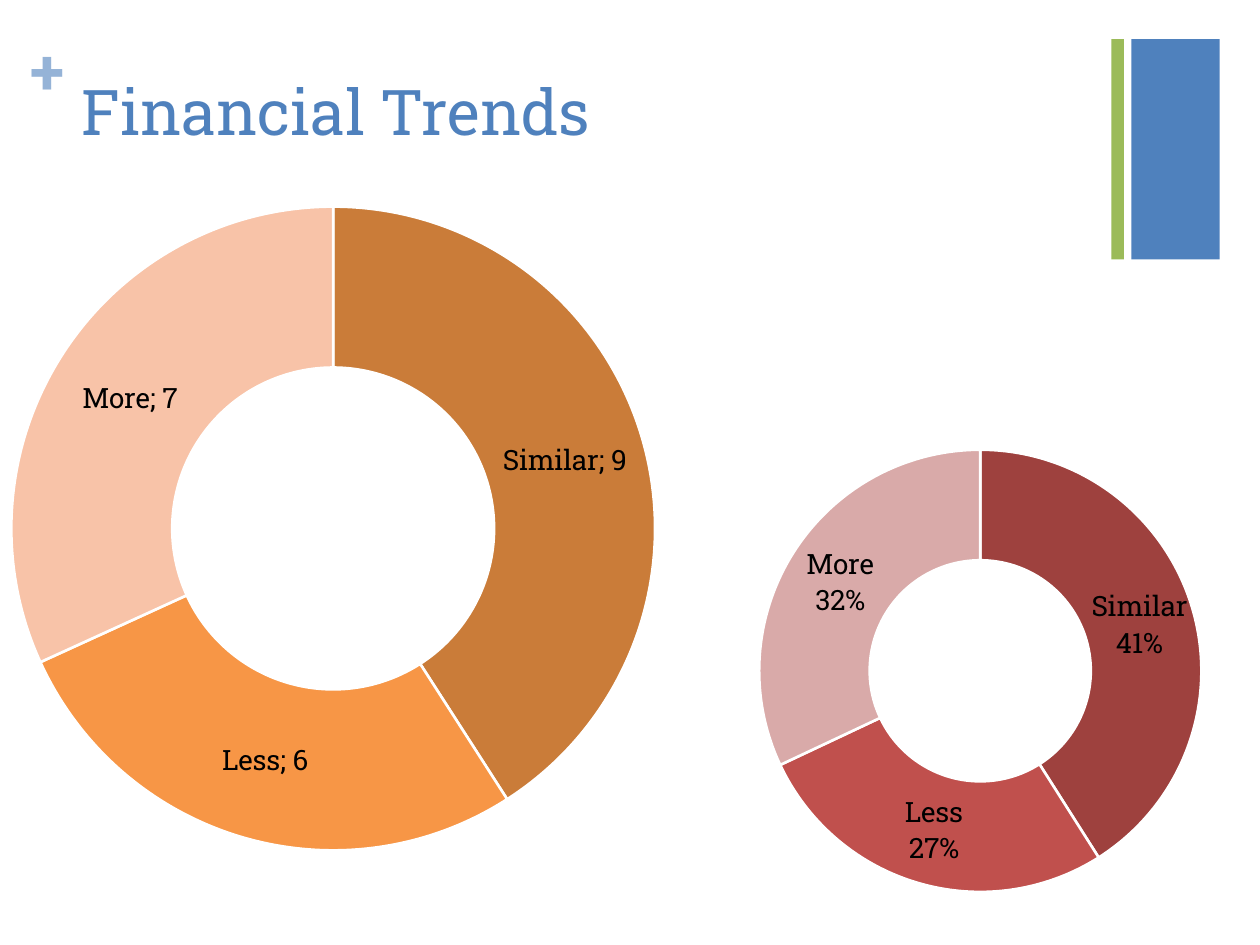
from lxml import etree
from pptx import Presentation
from pptx import util as u
from pptx.chart.data import CategoryChartData
from pptx.dml.color import RGBColor
from pptx.enum import chart as charts, shapes, text
from pptx.oxml.ns import qn

FONT = "Roboto Slab"
COLORS = {
    "blue": "4F81BD", "light_blue": "95B3D7", "green": "9BBB59",
    "dark_orange": "CA7C39", "orange": "F79646", "light_orange": "F8C3A8",
    "dark_red": "9E413E", "red": "C0504D", "light_red": "D9AAA9",
    "black": "000000", "white": "FFFFFF",
}
CATEGORIES = ["Similar", "Less", "More"]


def color(name):
    return RGBColor.from_string(COLORS[name])


def add_bar(slide, left, top, width, height, fill):
    bar = slide.shapes.add_shape(
        shapes.MSO_SHAPE.RECTANGLE,
        u.Inches(left), u.Inches(top), u.Inches(width), u.Inches(height))
    bar.shadow.inherit = False
    bar.fill.solid()
    bar.fill.fore_color.rgb = color(fill)
    bar.line.fill.background()


def add_label(slide, box, wording, fill, bold=False, inset=(0, 0)):
    label = slide.shapes.add_textbox(*[u.Inches(length) for length in box])
    frame = label.text_frame
    frame.word_wrap = True
    frame.vertical_anchor = text.MSO_ANCHOR.TOP
    frame.margin_left = frame.margin_right = u.Inches(inset[0])
    frame.margin_top = frame.margin_bottom = u.Inches(inset[1])
    frame.text = wording
    font = frame.paragraphs[0].runs[0].font
    font.name, font.size, font.bold = FONT, u.Pt(36), bold
    font.color.rgb = color(fill)


def add_decoration(slide, left, top):
    """Green and blue bars in the upper right corner."""
    add_bar(slide, left, top, 0.1, 1.75, "green")
    add_bar(slide, left + 0.16, top, 0.7, 1.75, "blue")


def add_heading(slide, left, top):
    """Plus sign and title."""
    add_label(slide, (left, top, 0.29, 0.61), "+", "light_blue", bold=True)
    add_label(slide, (left + 0.31, top + 0.28, 8.26, 1.22),
              "Financial Trends", "blue", inset=(0.1, 0.05))


def set_ring_layout(plot_area, width, height):
    """Fix the ring as a square, 0.14 in from top and bottom of the chart."""
    side = height - 0.28
    places = {"x": ((width - side) / 2 - 0.03) / width, "y": 0.14 / height,
              "w": side / width, "h": side / height}
    for old in plot_area.findall(qn("c:layout")):
        plot_area.remove(old)
    layout = etree.Element(qn("c:layout"))
    plot_area.insert(0, layout)
    manual = etree.SubElement(layout, qn("c:manualLayout"))
    settings = [("layoutTarget", "inner"), ("xMode", "edge"), ("yMode", "edge")]
    settings += [(key, f"{share:.4f}") for key, share in places.items()]
    for key, setting in settings:
        etree.SubElement(manual, qn("c:" + key)).set("val", setting)


def add_doughnut(slide, left, top, width, height, values, fills, percent):
    data = CategoryChartData()
    data.categories = CATEGORIES
    data.add_series("Series 1", values)
    chart = slide.shapes.add_chart(
        charts.XL_CHART_TYPE.DOUGHNUT, u.Inches(left), u.Inches(top),
        u.Inches(width), u.Inches(height), data).chart
    chart.has_legend = False
    chart.has_title = False
    chart.font.name, chart.font.size = FONT, u.Pt(16)
    chart.font.color.rgb = color("black")

    plot = chart.plots[0]
    for index, fill in enumerate(fills):
        segment = plot.series[0].points[index].format
        segment.fill.solid()
        segment.fill.fore_color.rgb = color(fill)
        segment.line.color.rgb = color("white")
        segment.line.width = u.Pt(1.5)

    # Category with value or percentage
    labels = plot.series[0].data_labels
    labels.show_category_name = True
    labels.show_value = not percent
    labels.show_percentage = percent
    separator = etree.Element(qn("c:separator"))
    separator.text = "\n" if percent else "; "
    label_xml = labels._element
    label_xml.find(qn("c:showBubbleSize")).addnext(separator)

    plot_area = chart._chartSpace.find(".//" + qn("c:plotArea"))
    plot_area.find(".//" + qn("c:holeSize")).set("val", "50")
    set_ring_layout(plot_area, width, height)


def main():
    presentation = Presentation()
    presentation.slide_width = u.Inches(10)
    presentation.slide_height = u.Inches(7.5)
    slide = presentation.slides.add_slide(presentation.slide_layouts[6])

    add_decoration(slide, 8.82, 0.31)
    add_heading(slide, 0.24, 0.25)
    add_doughnut(slide, -0.5, 1.5, 6.35, 5.39, (9, 6, 7),
                 ("dark_orange", "orange", "light_orange"), percent=False)
    add_doughnut(slide, 5.62, 3.43, 4.38, 3.79, (41, 27, 32),
                 ("dark_red", "red", "light_red"), percent=True)
    presentation.save("out.pptx")


if __name__ == "__main__":
    main()
